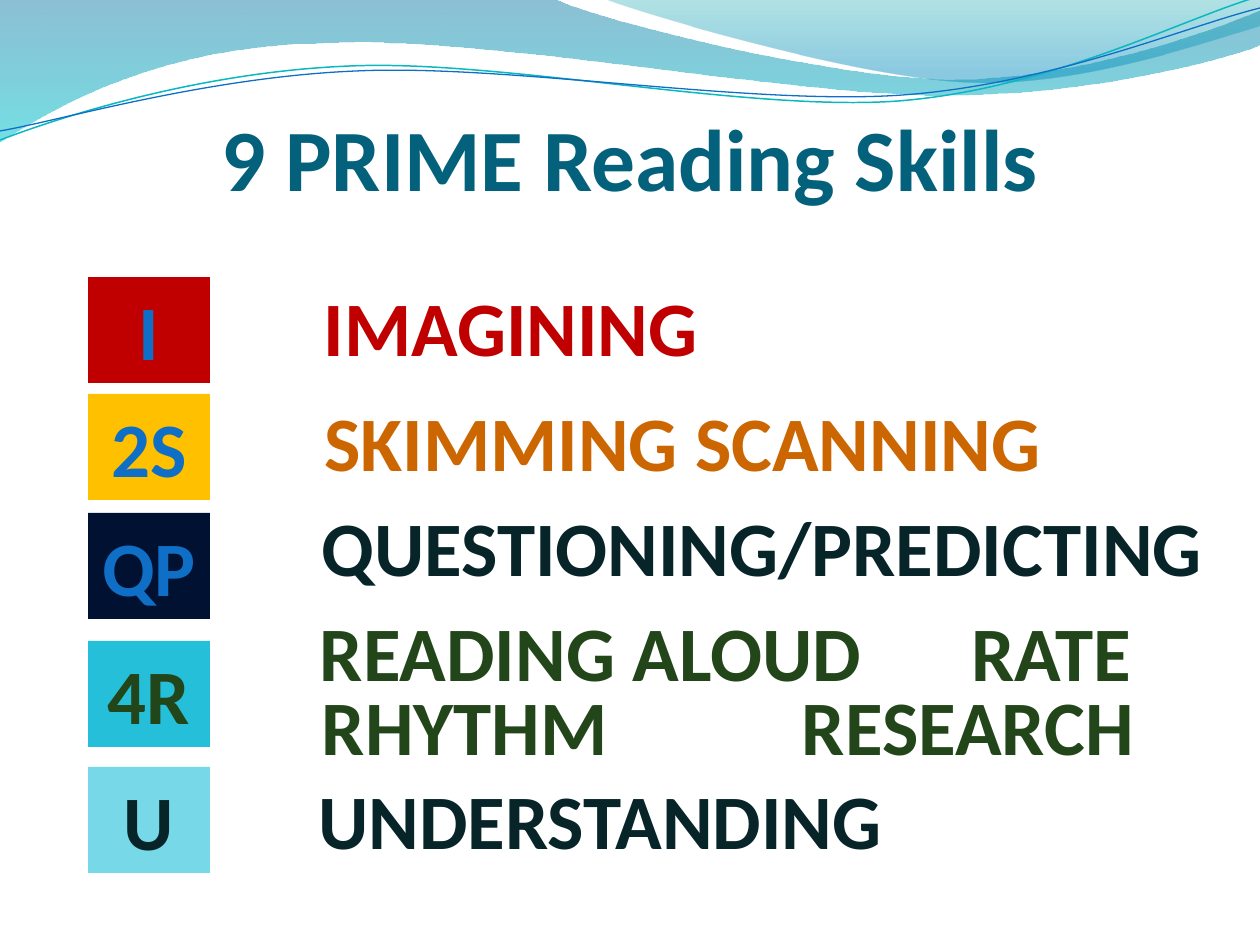
import pptx
import pptx.util
import pptx.dml.color
import pptx.enum.shapes
import pptx.enum.text
import pptx.oxml.ns
from lxml import etree

RGBColor = pptx.dml.color.RGBColor
PX = 914400 // 126
FONT = "Calibri"

TITLE_TEAL = RGBColor(0x04, 0x61, 0x7B)
RED = RGBColor(0xC0, 0x00, 0x00)
AMBER = RGBColor(0xFF, 0xC0, 0x00)
ORANGE = RGBColor(0xCC, 0x66, 0x00)
NAVY = RGBColor(0x00, 0x11, 0x32)
BLUE = RGBColor(0x0F, 0x6F, 0xC6)
CYAN = RGBColor(0x25, 0xBF, 0xD9)
PALE_CYAN = RGBColor(0x77, 0xD9, 0xE8)
GREEN = RGBColor(0x22, 0x46, 0x1A)
INK = RGBColor(0x07, 0x24, 0x28)
LINE_TEAL = RGBColor(0x0A, 0xB8, 0xBF)
WAVE_BLUE = RGBColor(0x00, 0x74, 0xA1)
WAVE_CYAN = RGBColor(0x00, 0xC6, 0xCF)
CREST_TEAL = RGBColor(0x00, 0xA1, 0xA9)
CREST_BLUE = RGBColor(0x00, 0x8B, 0xBF)

TITLE = "9 PRIME Reading Skills"
BADGE_LEFT, BADGE_WIDTH, ROW_HEIGHT = 88, 122, 106
BADGES = [
    ("I", 277, RED, BLUE),
    ("2S", 394, AMBER, BLUE),
    ("QP", 513, NAVY, BLUE),
    ("4R", 641, CYAN, GREEN),
    ("U", 767, PALE_CYAN, INK),
]
SKILLS = [
    ("IMAGINING", 310, 273, 402, RED),
    ("SKIMMING SCANNING", 308, 388, 750, ORANGE),
    ("QUESTIONING/PREDICTING", 305, 493, 915, INK),
    ("READING ALOUD", 305, 598, 572, GREEN),
    ("RATE", 958, 598, 186, GREEN),
    ("RHYTHM", 308, 672, 314, GREEN),
    ("RESEARCH", 788, 672, 360, GREEN),
    ("UNDERSTANDING", 304, 766, 593, INK),
]

WAVES = [
    ((0, 0), [
        [(554, -1)],
        [(600, 21), (837, 79), (955, 79)],
        [(1075, 79), (1207, 33), (1260, 11)],
        [(1261, 45)],
        [(1239, 55), (1096, 96), (940, 95)],
        [(784, 95), (481, 35), (324, 43)],
        [(163, 45), (58, 105), (-1, 142)],
        [(0, 0)],
    ], [(0, WAVE_BLUE, 45), (1, WAVE_CYAN, 55)]),
    ((604, -1), [
        [(641, 14), (859, 78), (969, 82)],
        [(1079, 87), (1211, 40), (1260, 26)],
        [(1260, 0)],
        [(604, -1)],
    ], [(0, CREST_TEAL, 30), (0.8, CREST_BLUE, 45)]),
]
STRANDS = [
    ((0, 140), [
        [(60, 117), (199, 72), (349, 66)],
        [(498, 59), (747, 112), (898, 101)],
        [(1050, 89), (1182, 19), (1257, -3)],
    ], LINE_TEAL, 0.85),
    ((0, 131), [
        [(59, 121), (207, 77), (357, 71)],
        [(508, 64), (752, 106), (903, 95)],
        [(1053, 84), (1187, 26), (1260, 8)],
    ], BLUE, 0.75),
]


def add_outline(slide, start, segments, close):
    builder = slide.shapes.build_freeform(*start, scale=PX)
    builder.add_line_segments(
        [point for segment in segments for point in segment], close=close)
    shape = builder.convert_to_shape()
    shape.shadow.inherit = False
    lines = iter(list(shape.element.spPr.iter(pptx.oxml.ns.qn("a:lnTo"))))
    for segment in segments:
        first, *others = [next(lines) for _ in segment]
        if others:
            curve = etree.Element(pptx.oxml.ns.qn("a:cubicBezTo"))
            first.addprevious(curve)
            for line in (first, *others):
                curve.append(line[0])
                line.getparent().remove(line)
    return shape


def add_wave(slide, start, segments, stops):
    shape = add_outline(slide, start, segments, True)
    shape.line.fill.background()
    shape.fill.gradient()
    shape.fill.gradient_angle = 270
    for stop, (position, color, _) in zip(shape.fill.gradient_stops, stops):
        stop.position = position
        stop.color.rgb = color
    colors = shape.element.spPr.iter(pptx.oxml.ns.qn("a:srgbClr"))
    for element, (_, _, opacity) in zip(colors, stops):
        alpha = etree.SubElement(element, pptx.oxml.ns.qn("a:alpha"))
        alpha.set("val", str(opacity * 1000))


def add_strand(slide, start, segments, color, width):
    shape = add_outline(slide, start, segments, False)
    shape.fill.background()
    shape.line.color.rgb = color
    shape.line.width = pptx.util.Pt(width)


def write(shape, text, size, color):
    text_frame = shape.text_frame
    text_frame.text = text
    text_frame.vertical_anchor = pptx.enum.text.MSO_ANCHOR.TOP
    paragraph = text_frame.paragraphs[0]
    paragraph.alignment = pptx.enum.text.PP_ALIGN.CENTER
    font = paragraph.runs[0].font
    font.name = FONT
    font.size = pptx.util.Pt(size)
    font.bold = True
    font.color.rgb = color
    return text_frame


def add_title(slide):
    title = slide.shapes.add_textbox(63 * PX, 59 * PX, 1134 * PX, 150 * PX)
    text_frame = write(title, TITLE, 50, TITLE_TEAL)
    text_frame.word_wrap = True
    text_frame.vertical_anchor = pptx.enum.text.MSO_ANCHOR.BOTTOM
    text_frame.margin_left = text_frame.margin_right = text_frame.margin_bottom = 0


def add_badge(slide, text, top, fill, color):
    badge = slide.shapes.add_shape(
        pptx.enum.shapes.MSO_SHAPE.RECTANGLE,
        BADGE_LEFT * PX, top * PX, BADGE_WIDTH * PX, ROW_HEIGHT * PX)
    badge.shadow.inherit = False
    badge.fill.solid()
    badge.fill.fore_color.rgb = fill
    badge.line.fill.background()
    write(badge, text, 44, color).word_wrap = True


def add_skill(slide, text, left, top, width, color):
    box = slide.shapes.add_textbox(left * PX, top * PX, width * PX, ROW_HEIGHT * PX)
    text_frame = write(box, text, 44, color)
    text_frame.word_wrap = False
    text_frame.auto_size = pptx.enum.text.MSO_AUTO_SIZE.SHAPE_TO_FIT_TEXT


def main():
    presentation = pptx.Presentation()
    presentation.slide_width = pptx.util.Inches(10)
    presentation.slide_height = pptx.util.Inches(7.5)
    slide = presentation.slides.add_slide(presentation.slide_layouts[6])
    for wave in WAVES:
        add_wave(slide, *wave)
    for strand in STRANDS:
        add_strand(slide, *strand)
    add_title(slide)
    for badge in BADGES:
        add_badge(slide, *badge)
    for skill in SKILLS:
        add_skill(slide, *skill)
    presentation.save("out.pptx")


if __name__ == "__main__":
    main()
